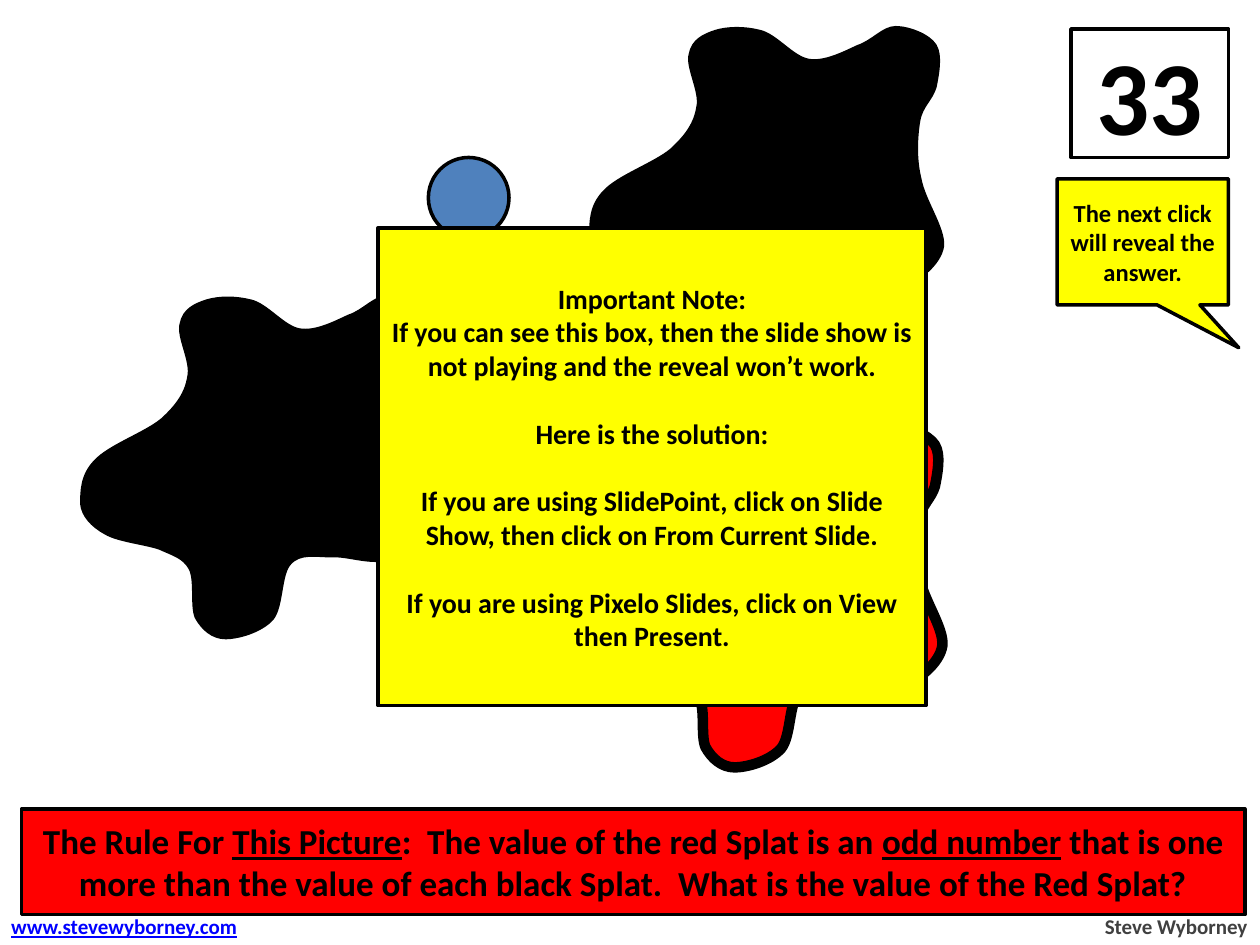
from pptx import Presentation
from pptx.dml.color import RGBColor
from pptx.enum.shapes import MSO_SHAPE
from pptx.enum.text import MSO_ANCHOR, MSO_AUTO_SIZE, PP_ALIGN
from pptx.oxml.ns import qn
from pptx.util import Inches, Pt

# Grid: 100 columns by 75 rows, one tenth of an inch each
UNIT = Inches(0.1)
BLACK, WHITE, RED, YELLOW, BLUE = "000000", "FFFFFF", "FF0000", "FFFF00", "4F81BD"

# Splat outline in hundredths of an inch: a start, then three points per curve
START = (19, 187)
CURVES = [
    (8, 181), (1, 173), (0, 164), (0, 154), (0, 141), (11, 130),
    (22, 118), (51, 108), (64, 97), (76, 86), (83, 76), (85, 63),
    (88, 51), (76, 31), (79, 21), (81, 10), (90, 6), (99, 3),
    (109, 0), (122, 0), (134, 3), (147, 6), (160, 24), (173, 26),
    (186, 28), (201, 20), (212, 15), (224, 11), (232, 0), (242, 0),
    (252, 0), (268, 6), (273, 14), (278, 22), (275, 37), (273, 47),
    (270, 57), (262, 62), (260, 74), (258, 86), (257, 104), (261, 120),
    (264, 137), (280, 159), (279, 173), (277, 188), (258, 202), (244, 207),
    (230, 212), (211, 204), (198, 205), (185, 205), (173, 202), (165, 211),
    (157, 219), (159, 245), (151, 255), (142, 265), (124, 270), (114, 270),
    (104, 270), (96, 263), (91, 254), (87, 245), (91, 224), (86, 215),
    (81, 206), (73, 204), (62, 199), (51, 195), (29, 193), START,
]
SPLAT_ROWS = 27


def color(code):
    return RGBColor.from_string(code)


def grid(*cells):
    return [round(cell * UNIT) for cell in cells]


def paint(shape, fill, width=2):
    shape.shadow.inherit = False
    shape.fill.solid()
    shape.fill.fore_color.rgb = color(fill)
    shape.line.color.rgb = color(BLACK)
    shape.line.width = Pt(width)


def block(slide, kind, box, fill):
    shape = slide.shapes.add_shape(kind, *grid(*box))
    paint(shape, fill)
    return shape


def write(shape, text, size, ink=BLACK, align=PP_ALIGN.CENTER, gap=0,
          anchor=MSO_ANCHOR.MIDDLE, wrap=True):
    """Fill a shape: underscores enclose underlined words, a leading ^ adds a gap."""
    frame = shape.text_frame
    frame.word_wrap = wrap
    frame.vertical_anchor = anchor
    for index, line in enumerate(text.split("\n")):
        para = frame.add_paragraph() if index else frame.paragraphs[0]
        para.alignment = align
        if line.startswith("^"):
            para.space_before = Pt(gap)
        for part, words in enumerate(line.lstrip("^").split("_")):
            if not words:
                continue
            run = para.add_run()
            run.text = words
            font = run.font
            font.name, font.size, font.bold = "Calibri", Pt(size), True
            font.color.rgb = color(ink)
            if part % 2:
                font.underline = True


def splat(slide, left, top, fill, width):
    """A blob with a curved outline, turned a quarter left."""
    def turn(point):
        return SPLAT_ROWS * 10 - point[1], point[0]

    pen = slide.shapes.build_freeform(*turn(START), scale=UNIT / 10)
    pen.add_line_segments([turn(point) for point in CURVES], close=True)
    shape = pen.convert_to_shape(*grid(left, top))
    shape.rotation = 270
    paint(shape, fill, width)
    # Join each three straight steps into one curve
    steps = list(shape.element.iter(qn("a:lnTo")))[:len(CURVES)]
    track = steps[0].getparent()
    for first in range(0, len(steps), 3):
        trio = steps[first:first + 3]
        curve = track.makeelement(qn("a:cubicBezTo"))
        trio[0].addprevious(curve)
        for step in trio:
            curve.append(step[0])
            track.remove(step)


def corner(slide, left, top, cols):
    """The total, with the hint that hangs below it."""
    total = block(slide, MSO_SHAPE.RECTANGLE,
                  (left + cols - 12.5, top, 12.5, 10.2), WHITE)
    write(total, "33", 60)
    hint = block(slide, MSO_SHAPE.RECTANGULAR_CALLOUT,
                 (left, top + 11.9, cols, 10), YELLOW)
    hint.adjustments[0], hint.adjustments[1] = 0.56, 0.84
    write(hint, "The next click will reveal the answer.", 14)


def rule(slide, box):
    bar = block(slide, MSO_SHAPE.RECTANGLE, box, RED)
    write(bar, "The Rule For _This Picture_:  The value of the red Splat is an "
               "_odd number_ that is one more than the value of each black "
               "Splat.  What is the value of the Red Splat?", 20)


def note(slide, box):
    card = block(slide, MSO_SHAPE.RECTANGLE, box, YELLOW)
    write(card, "Important Note:\n"
                "If you can see this box, then the slide show is not playing "
                "and the reveal won’t work.\n"
                "^Here is the solution:\n"
                "^If you are using SlidePoint, click on Slide Show, then click "
                "on From Current Slide.\n"
                "^If you are using Pixelo Slides, click on View then Present.",
          16, gap=19.5)


def footer(slide, left, top, cols):
    items = [
        (left, 20.5, "_www.stevewyborney.com_", "0000FF", PP_ALIGN.LEFT),
        (left + cols - 13.4, 13.4, "Steve Wyborney", "404040", PP_ALIGN.RIGHT),
    ]
    for start, wide, text, ink, align in items:
        label = slide.shapes.add_textbox(*grid(start, top, wide, 3))
        write(label, text, 12, ink, align, anchor=MSO_ANCHOR.TOP, wrap=False)
        label.text_frame.auto_size = MSO_AUTO_SIZE.SHAPE_TO_FIT_TEXT


def main():
    deck = Presentation()
    deck.slide_width, deck.slide_height = grid(100, 75)
    slide = deck.slides.add_slide(deck.slide_layouts[6])

    footer(slide, -0.1, 72, 100.1)
    # Splats and the dot
    splat(slide, 7, 23.1, BLACK, 2)
    splat(slide, 47.4, 1.7, BLACK, 2)
    splat(slide, 47.4, 33.4, RED, 6)
    block(slide, MSO_SHAPE.OVAL, (34, 12.5, 6.4, 6.4), BLUE)
    # Text panels
    rule(slide, (1.7, 64.2, 97.1, 8.4))
    corner(slide, 83.9, 2.3, 13.6)
    note(slide, (30, 18.1, 43.5, 37.9))

    deck.save("out.pptx")


if __name__ == "__main__":
    main()
